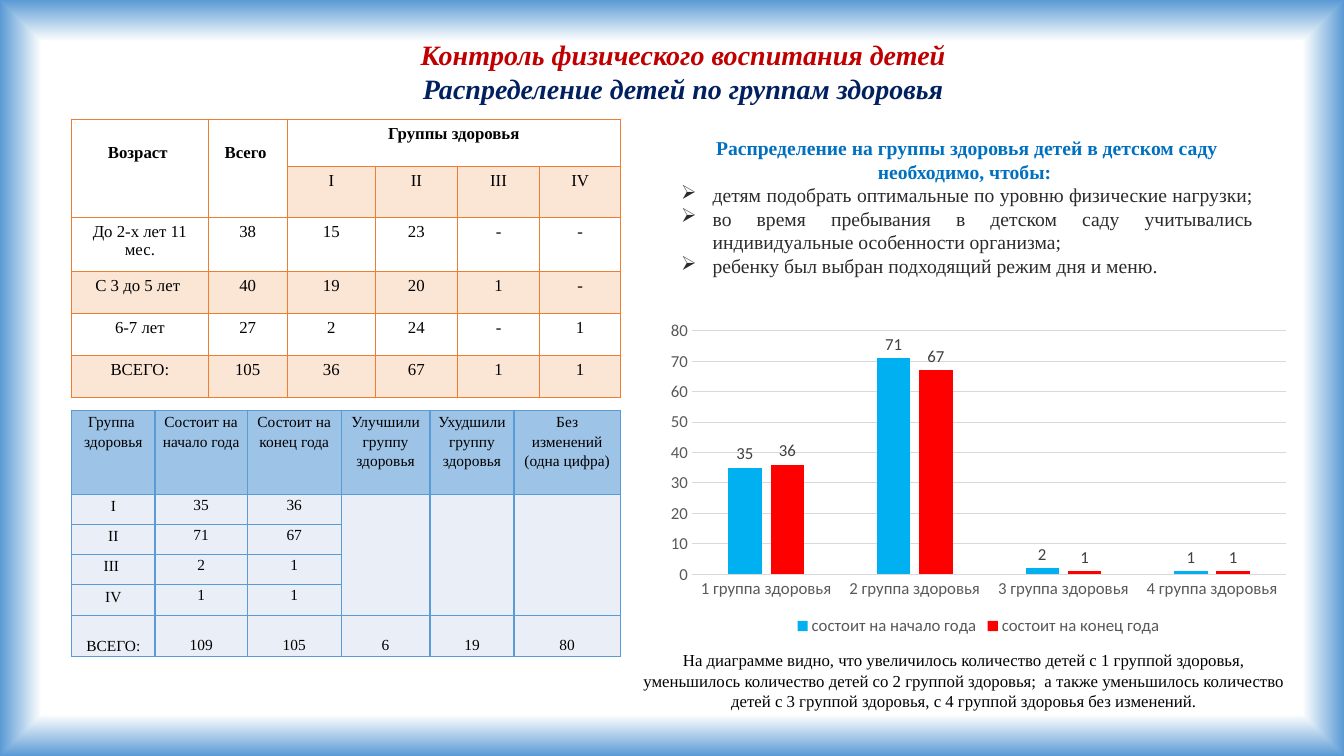
import pptx
import pptx.chart.data
import pptx.dml.color
import pptx.enum.chart
import pptx.enum.dml
import pptx.enum.text
import pptx.oxml
import pptx.oxml.ns
import pptx.util

Pt = pptx.util.Pt
RGB = pptx.dml.color.RGBColor
ALIGN = pptx.enum.text.PP_ALIGN
CHART = pptx.enum.chart

BLACK = RGB(0, 0, 0)
WHITE = RGB(255, 255, 255)
DARK_RED = RGB(0xC0, 0, 0)
NAVY = RGB(0, 0x20, 0x60)
BLUE = RGB(0, 0x70, 0xC0)
INK = RGB(0x2B, 0x2B, 0x2B)
ORANGE = RGB(0xED, 0x7D, 0x31)
EDGE = RGB(0x5B, 0x9B, 0xD5)
HEAD = RGB(0x9D, 0xC3, 0xE6)
PALE = RGB(0xEA, 0xEF, 0xF7)
SKY = RGB(0, 0xB0, 0xF0)
RED = RGB(255, 0, 0)
GRAY = RGB(0x59, 0x59, 0x59)
LABEL = RGB(0x40, 0x40, 0x40)
GRID = RGB(0xD9, 0xD9, 0xD9)
SERIF = "Times New Roman"
SANS = "Calibri"

AGES = [
    ["Возраст ", "Всего ", "Группы здоровья", "", "", ""],
    ["", "", "I", "II", "III", "IV"],
    ["До 2-х лет 11 мес.", "38", "15", "23", "-", "-"],
    ["С 3 до 5 лет ", "40", "19", "20", "1", "-"],
    ["6-7 лет", "27", "2", "24", "-", "1"],
    ["ВСЕГО:", "105", "36", "67", "1", "1"],
]
GROUPS = [
    ["Группа \nздоровья", "Состоит на начало года", "Состоит на конец года",
     "Улучшили группу здоровья", "Ухудшили группу здоровья",
     "Без изменений\n(одна цифра)"],
    ["I", "35", "36", "", "", ""],
    ["II", "71", "67", "", "", ""],
    ["III ", "2", "1", "", "", ""],
    ["IV", "1", "1", "", "", ""],
    ["ВСЕГО:", "109", "105", "6", "19", "80"],
]
GOALS = [
    "Распределение на группы здоровья детей в детском саду необходимо, чтобы: ",
    "детям подобрать оптимальные по уровню физические нагрузки; ",
    "во время пребывания в детском саду учитывались индивидуальные особенности организма; ",
    "ребенку был выбран подходящий режим дня и меню. ",
]
NOTE = ("На диаграмме видно, что увеличилось количество детей с 1 группой здоровья, "
        "уменьшилось количество детей со 2 группой здоровья;  а также уменьшилось "
        "количество детей с 3 группой здоровья, с 4 группой здоровья без изменений.")


def add_xml(node, tag, **attrs):
    child = pptx.oxml.parse_xml(f'<a:{tag} {pptx.oxml.ns.nsdecls("a")}/>')
    for key, value in attrs.items():
        child.set(key, str(value))
    node.append(child)
    return child


def set_font(font, size, color, name=SERIF, bold=False, italic=False):
    font.size, font.name = Pt(size), name
    font.bold, font.italic = bold, italic
    font.color.rgb = color


def style(para, size, color, align=ALIGN.CENTER, bold=False, italic=False):
    para.alignment = align
    for run in para.runs:
        set_font(run.font, size, color, SERIF, bold, italic)


def place(shape, left, top, width, height):
    shape.left, shape.top = Pt(left), Pt(top)
    shape.width, shape.height = Pt(width), Pt(height)


def add_back(slide):
    fill = slide.background.fill
    fill.gradient()
    grad = slide.background._cSld.bg.bgPr.find(pptx.oxml.ns.qn("a:gradFill"))
    for child in list(grad):
        grad.remove(child)
    stops = add_xml(grad, "gsLst")
    for spot, color in ((0, WHITE), (89, WHITE), (100, EDGE)):
        add_xml(add_xml(stops, "gs", pos=spot * 1000), "srgbClr", val=color)
    center = add_xml(grad, "path", path="shape")
    add_xml(center, "fillToRect", l=50000, t=50000, r=50000, b=50000)


def add_title(slide):
    title = slide.shapes.title
    place(title, 146, 23, 684, 55.5)
    frame = title.text_frame
    frame.text = "Контроль физического воспитания детей\nРаспределение детей по группам здоровья"
    frame.auto_size = pptx.enum.text.MSO_AUTO_SIZE.NONE
    for para, color in zip(frame.paragraphs, (DARK_RED, NAVY)):
        style(para, 20, color, bold=True, italic=True)


def add_text(slide, box, text):
    shape = slide.shapes.add_textbox(*map(Pt, box))
    frame = shape.text_frame
    frame.word_wrap = True
    frame.text = text
    return frame.paragraphs


def add_bullet(para):
    props = para._p.get_or_add_pPr()
    props.set("marL", str(Pt(22.5)))
    props.set("indent", str(Pt(-22.5)))
    add_xml(props, "buChar", char="➢")


def add_grid(slide, box, cols, rows, data, size):
    """Add a plain table with its text."""
    frame = slide.shapes.add_table(len(rows), len(cols), *map(Pt, box))
    table = frame.table
    table.first_row = table.horz_banding = False
    for col, width in zip(table.columns, cols):
        col.width = Pt(width)
    for row, height, texts in zip(table.rows, rows, data):
        row.height = Pt(height)
        for cell, text in zip(row.cells, texts):
            cell.text = text
            for para in cell.text_frame.paragraphs:
                style(para, size, BLACK)
    return table


def paint(cell, line, color=None, alpha=100, base=1):
    """Draw the four borders of a cell, then its fill."""
    props = cell._tc.get_or_add_tcPr()
    for side in "LRTB":
        width = base if side == "B" else 1
        edge = add_xml(props, "ln" + side, w=Pt(width))
        add_xml(add_xml(edge, "solidFill"), "srgbClr", val=line)
    if color is None:
        cell.fill.background()
        return
    cell.fill.solid()
    cell.fill.fore_color.rgb = color
    if alpha < 100:
        tone = props.find(".//" + pptx.oxml.ns.qn("a:solidFill") + "[last()]")
        tone = props.findall(pptx.oxml.ns.qn("a:solidFill"))[-1][0]
        add_xml(tone, "alpha", val=alpha * 1000)


def add_ages(slide):
    table = add_grid(slide, (51.2, 85.2, 392, 199), (97.5, 56.5, 63, 58.5, 59, 57.5),
                     (34, 36, 39, 30, 30, 30), AGES, 12)
    for row in range(6):
        for col in range(6):
            tint = row in (3, 5) or (row == 1 and col > 1)
            base = 2 if row == 1 and col < 2 else 1
            paint(table.cell(row, col), ORANGE, ORANGE if tint else None, 20, base)
    for col in range(3):
        head = table.cell(0, col)
        style(head.text_frame.paragraphs[0], 12, BLACK, bold=True)
        if col < 2:
            head.margin_top = Pt(17)
            head.merge(table.cell(1, col))
    table.cell(0, 2).merge(table.cell(0, 5))


def add_groups(slide):
    table = add_grid(slide, (51.2, 293, 392, 176), (59.5, 66, 67, 63.5, 60, 76),
                     (60, 21.6, 21.6, 21.6, 21.6, 29.2), GROUPS, 11)
    for row in range(6):
        for col in range(6):
            cell = table.cell(row, col)
            paint(cell, EDGE, PALE if row else HEAD)
            cell.margin_left = cell.margin_right = Pt(5)
            cell.margin_top = Pt(14.5 if row == 5 else 0.7)
            cell.margin_bottom = 0
            for para in cell.text_frame.paragraphs:
                para.line_spacing = 1.07 if row and col else 1.15
    for col in range(3, 6):
        table.cell(1, col).merge(table.cell(4, col))


def add_bars(slide):
    data = pptx.chart.data.CategoryChartData()
    data.categories = [f"{num} группа здоровья" for num in range(1, 5)]
    data.add_series("состоит на начало года", (35, 71, 2, 1))
    data.add_series("состоит на конец года", (36, 67, 1, 1))
    kind = CHART.XL_CHART_TYPE.COLUMN_CLUSTERED
    chart = slide.shapes.add_chart(kind, Pt(470), Pt(224.6), Pt(458), Pt(232.6), data).chart
    set_font(chart.font, 10, BLACK, SANS)
    chart.has_title = False
    # Legend
    chart.has_legend = True
    chart.legend.position = CHART.XL_LEGEND_POSITION.BOTTOM
    chart.legend.include_in_layout = False
    set_font(chart.legend.font, 12, GRAY, SANS)
    # Axes
    values = chart.value_axis
    values.minimum_scale, values.maximum_scale, values.major_unit = 0, 80, 10
    for axis in (chart.category_axis, values):
        axis.major_tick_mark = axis.minor_tick_mark = CHART.XL_TICK_MARK.NONE
        set_font(axis.tick_labels.font, 12, GRAY, SANS)
    values.format.line.fill.background()
    for line in (chart.category_axis.format.line, values.major_gridlines.format.line):
        line.color.rgb = GRID
        line.width = Pt(0.75)
    # Bars
    plot = chart.plots[0]
    plot.gap_width, plot.overlap, plot.vary_by_categories = 219, -27, False
    for bars, color in zip(plot.series, (SKY, RED)):
        bars.format.fill.solid()
        bars.format.fill.fore_color.rgb = color
        labels = bars.data_labels
        labels.show_value = True
        labels.position = CHART.XL_LABEL_POSITION.OUTSIDE_END
        set_font(labels.font, 12, LABEL, SANS)


def main():
    deck = pptx.Presentation()
    deck.slide_width, deck.slide_height = Pt(960), Pt(540)
    slide = deck.slides.add_slide(deck.slide_layouts[5])
    add_back(slide)
    add_title(slide)
    add_ages(slide)
    # Goals
    lead, *goals = add_text(slide, (479.5, 93.6, 422.6, 108.7), "\n".join(GOALS))
    style(lead, 14, BLUE, bold=True)
    for para in goals:
        style(para, 14, INK, ALIGN.JUSTIFY)
        add_bullet(para)
    add_groups(slide)
    add_bars(slide)
    # Note under the chart
    style(add_text(slide, (448.6, 460.8, 480, 51), NOTE)[0], 12, BLACK)
    deck.save("out.pptx")


if __name__ == "__main__":
    main()
